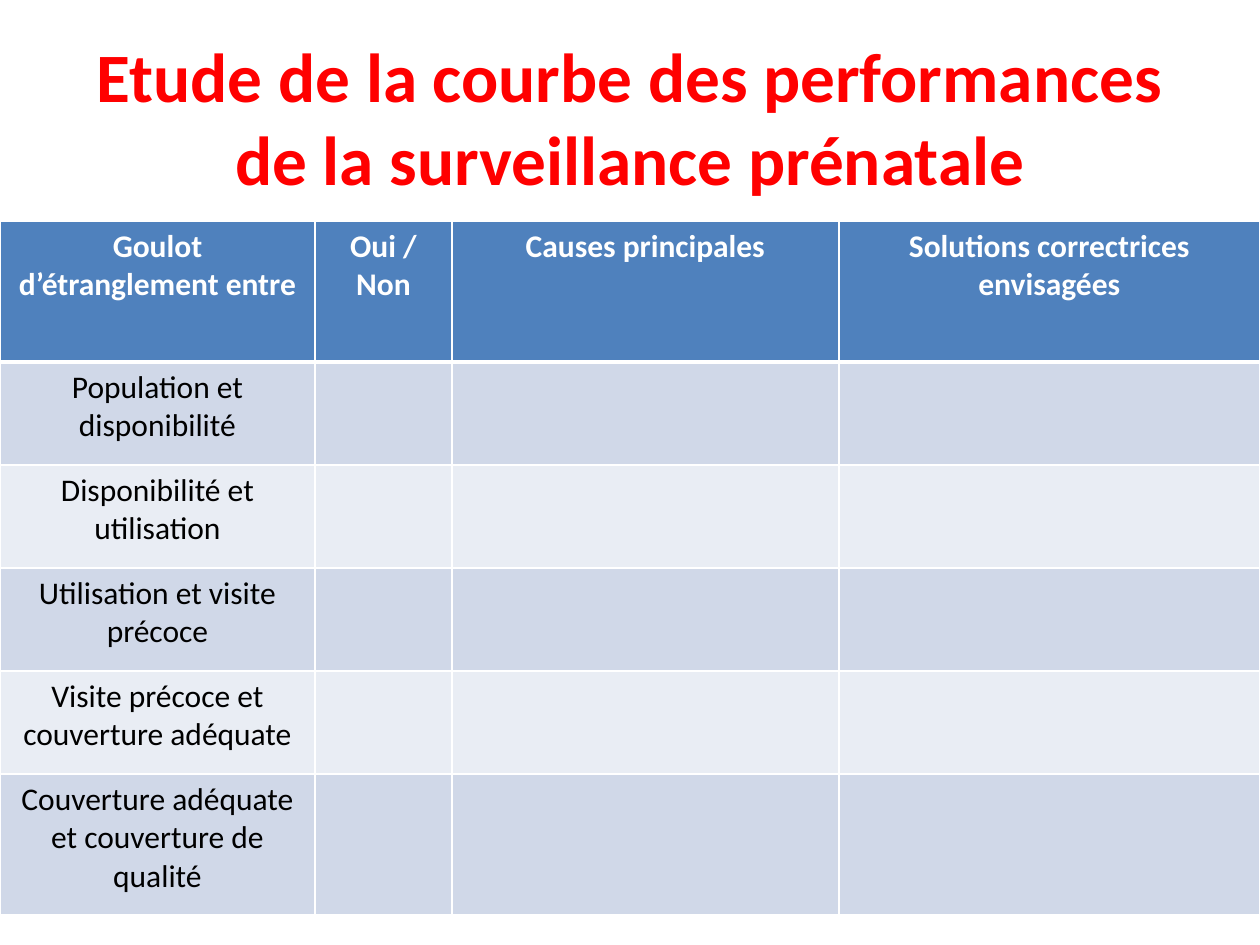
from lxml.etree import SubElement
from pptx import Presentation
from pptx.dml.color import RGBColor
from pptx.enum.text import MSO_ANCHOR as Anchor, PP_ALIGN as Align
from pptx.oxml.ns import qn
from pptx.util import Emu, Pt

PX = 914400 // 126
FONT = "Calibri"
COLORS = {
    "title": "FF0000",
    "header": "4F81BD",
    "odd": "D0D8E8",
    "even": "E9EDF4",
    "white": "FFFFFF",
    "black": "000000",
}
TITLE = "Etude de la courbe des performances de la surveillance prénatale"
HEADERS = [
    "Goulot d’étranglement entre",
    "Oui / Non",
    "Causes principales",
    "Solutions correctrices envisagées",
]
BOTTLENECKS = [
    "Population et disponibilité",
    "Disponibilité et utilisation",
    "Utilisation et visite précoce",
    "Visite précoce et couverture adéquate",
    "Couverture adéquate et couverture de qualité",
]
COL_WIDTHS = [315, 137, 387, 421]
ROW_HEIGHTS = [141, 103, 103, 103, 103, 141]


def px(n):
    """Turn whole pixels into EMU."""
    return Emu(n * PX)


def rgb(name):
    """Look up a named colour."""
    return RGBColor.from_string(COLORS[name])


def write(tf, text, size, color, bold):
    """Write one centred run into a text frame."""
    p = tf.paragraphs[0]
    p.alignment = Align.CENTER
    r = p.add_run()
    r.text = text
    r.font.name = FONT
    r.font.size = Pt(size)
    r.font.bold = bold
    r.font.color.rgb = rgb(color)


def set_borders(cell, top, bottom):
    """Draw white borders, with the top and bottom widths given in points."""
    tc_pr = cell._tc.get_or_add_tcPr()
    for side, width in (("L", 1), ("R", 1), ("T", top), ("B", bottom)):
        ln = SubElement(tc_pr, qn(f"a:ln{side}"), w=str(Pt(width)))
        fill = SubElement(ln, qn("a:solidFill"))
        SubElement(fill, qn("a:srgbClr"), val=COLORS["white"])


def set_cell(cell, text, row):
    """Format one table cell according to its row."""
    is_header = row == 0
    set_borders(cell, 3 if row == 1 else 1, 3 if is_header else 1)
    cell.fill.solid()
    band = "odd" if row % 2 else "even"
    cell.fill.fore_color.rgb = rgb("header" if is_header else band)
    if text:
        color = "white" if is_header else "black"
        write(cell.text_frame, text, 18, color, is_header)


def add_title(s):
    """Place and fill the title placeholder."""
    sp = s.shapes.title
    sp.left, sp.top, sp.width, sp.height = px(63), px(38), px(1134), px(157)
    tf = sp.text_frame
    tf.word_wrap = True
    tf.vertical_anchor = Anchor.MIDDLE
    write(tf, TITLE, 39.6, "title", True)


def add_bottleneck_table(s):
    """Add the table of bottlenecks, causes and solutions."""
    rows = [HEADERS] + [[name, "", "", ""] for name in BOTTLENECKS]
    frame = s.shapes.add_table(
        len(rows), len(HEADERS), px(0), px(221),
        px(sum(COL_WIDTHS)), px(sum(ROW_HEIGHTS)),
    )
    table = frame.table
    for col, width in zip(table.columns, COL_WIDTHS):
        col.width = px(width)
    for row, height in zip(table.rows, ROW_HEIGHTS):
        row.height = px(height)
    for i, texts in enumerate(rows):
        for j, text in enumerate(texts):
            set_cell(table.cell(i, j), text, i)


def main():
    """Build and save the slide."""
    prs = Presentation()
    prs.slide_width, prs.slide_height = px(1260), px(945)
    s = prs.slides.add_slide(prs.slide_layouts[5])
    add_title(s)
    add_bottleneck_table(s)
    prs.save("out.pptx")


if __name__ == "__main__":
    main()
